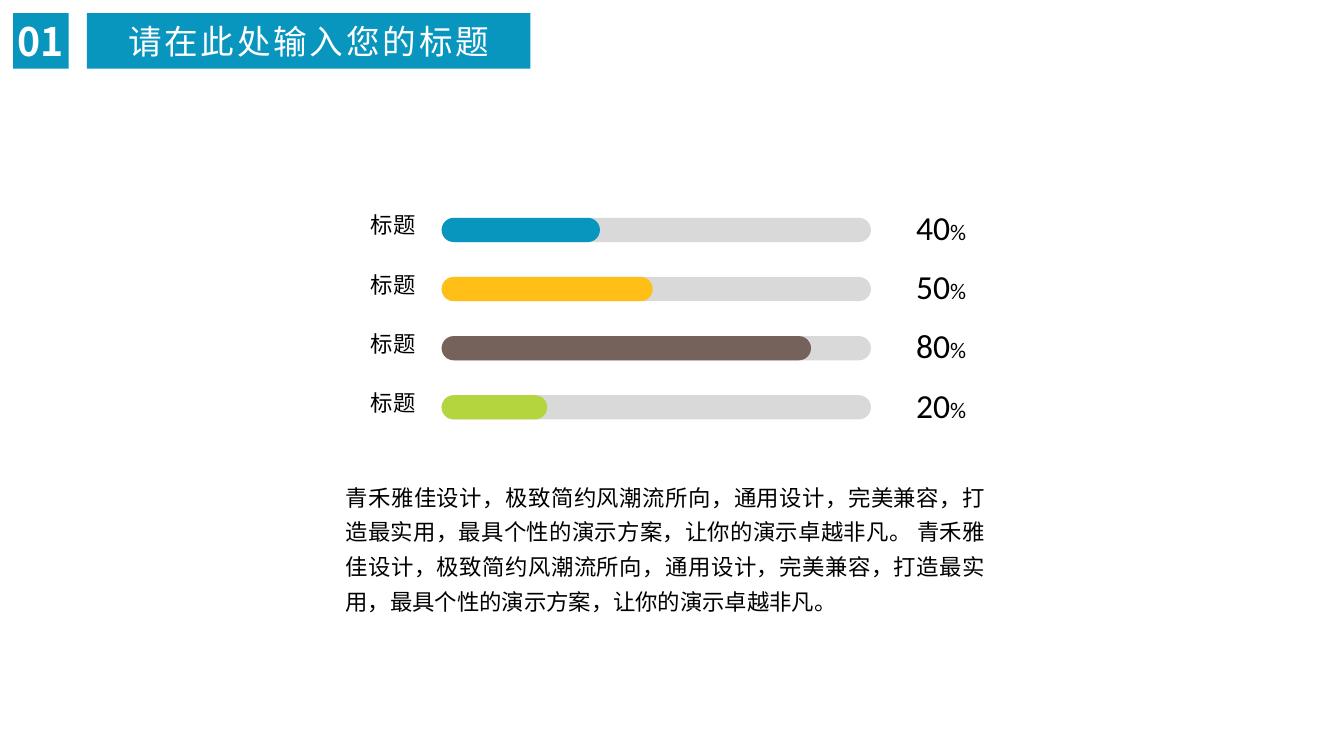
from lxml import etree
from pptx import Presentation
from pptx import util as u
from pptx.dml.color import RGBColor
from pptx.enum import shapes, text
from pptx.oxml.ns import qn

CJK = "Noto Sans CJK SC"
BLUE, YELLOW, BROWN, GREEN = "0895BE", "FFBF17", "75625B", "B3D53D"
TRACK, BLACK, WHITE = "D9D9D9", "000000", "FFFFFF"

# Label, percentage, bar length in steps, colour
SKILLS = [
    ("标题", "40", 3, BLUE),
    ("标题", "50", 4, YELLOW),
    ("标题", "80", 7, BROWN),
    ("标题", "20", 2, GREEN),
]
ROW_PITCH, BAR_HEIGHT, BAR_STEP = 1.49, 0.61, 1.33
SUMMARY = (
    "青禾雅佳设计，极致简约风潮流所向，通用设计，完美兼容，打造最实用，最具个性的演示方案，让你的演示卓越非凡。 "
    "青禾雅佳设计，极致简约风潮流所向，通用设计，完美兼容，打造最实用，最具个性的演示方案，让你的演示卓越非凡。"
)


def colour(value):
    return RGBColor.from_string(value)


def place(item, left, top, width, height):
    item.left, item.top = u.Cm(left), u.Cm(top)
    item.width, item.height = u.Cm(width), u.Cm(height)


def write(item, content, size=16, font=CJK, ink=BLACK, bold=False, align="LEFT",
          anchor="MIDDLE", inset=True, tracking=0, line=None, gap=0):
    """Write a string, or a list of (string, size) runs, as one paragraph."""
    frame = item.text_frame
    frame.word_wrap = True
    frame.auto_size = text.MSO_AUTO_SIZE.NONE
    frame.vertical_anchor = text.MSO_ANCHOR[anchor]
    if not inset:
        frame.margin_left = frame.margin_right = 0
        frame.margin_top = frame.margin_bottom = 0
    paragraph = frame.paragraphs[0]
    paragraph.alignment = text.PP_ALIGN[align]
    paragraph.space_before = paragraph.space_after = u.Pt(gap)
    if line:
        paragraph.line_spacing = line
    runs = [(content, size)] if isinstance(content, str) else content
    for words, points in runs:
        run = paragraph.add_run()
        run.text = words
        run.font.size, run.font.bold = u.Pt(points), bold
        run.font.color.rgb = colour(ink)
        run.font.name = font
        properties = run.font._element
        etree.SubElement(properties, qn("a:ea")).set("typeface", CJK)
        if tracking:
            properties.set("spc", str(tracking * 100))


def add_block(slide, kind, box, fill):
    block = slide.shapes.add_shape(shapes.MSO_SHAPE[kind], *map(u.Cm, box))
    block.shadow.inherit = False
    block.fill.solid()
    block.fill.fore_color.rgb = colour(fill)
    block.line.fill.background()
    if kind == "ROUNDED_RECTANGLE":
        block.adjustments[0] = 0.5
    return block


def add_label(slide, box, content, **style):
    write(slide.shapes.add_textbox(*map(u.Cm, box)), content, **style)


def add_header(slide, left, top, height):
    # Section number
    number = add_block(slide, "RECTANGLE", (left, top, height, height), BLUE)
    write(number, "01", size=28, ink=WHITE, bold=True, align="CENTER", inset=False)
    # Slide title
    title = slide.shapes.title
    place(title, left + 1.86, top, 11.18, height)
    title.fill.solid()
    title.fill.fore_color.rgb = colour(BLUE)
    write(title, "请在此处输入您的标题", size=24, ink=WHITE, align="CENTER", tracking=2)


def add_skill_row(slide, left, top, width, skill):
    name, percent, steps, fill = skill
    # Grey track with the coloured bar over it
    for length, shade in ((width, TRACK), (steps * BAR_STEP, fill)):
        add_block(slide, "ROUNDED_RECTANGLE", (left, top, length, BAR_HEIGHT), shade)
    # Name on the left, percentage on the right
    add_label(slide, (left - 2.95, top - 0.33, 2.54, 1.02), name, align="RIGHT")
    add_label(slide, (left + width + 1.14, top - 0.25, 2.01, 0.97),
              [(percent, 24), ("%", 16)], font="Calibri", inset=False)


def add_skill_bars(slide, left, top, width):
    for index, skill in enumerate(SKILLS):
        add_skill_row(slide, left, top + index * ROW_PITCH, width, skill)


def add_summary(slide, *box):
    add_label(slide, box, SUMMARY, font="Arial", align="JUSTIFY", anchor="TOP",
              line=1.3, gap=6)


def main():
    deck = Presentation()
    deck.slide_width, deck.slide_height = u.Cm(33.87), u.Cm(19.05)
    slide = deck.slides.add_slide(deck.slide_layouts.get_by_name("Title Only"))
    add_header(slide, 0.33, 0.33, 1.4)
    add_skill_bars(slide, 11.13, 5.49, 10.82)
    add_summary(slide, 8.46, 11.86, 16.64, 3.53)
    deck.save("out.pptx")


if __name__ == "__main__":
    main()
